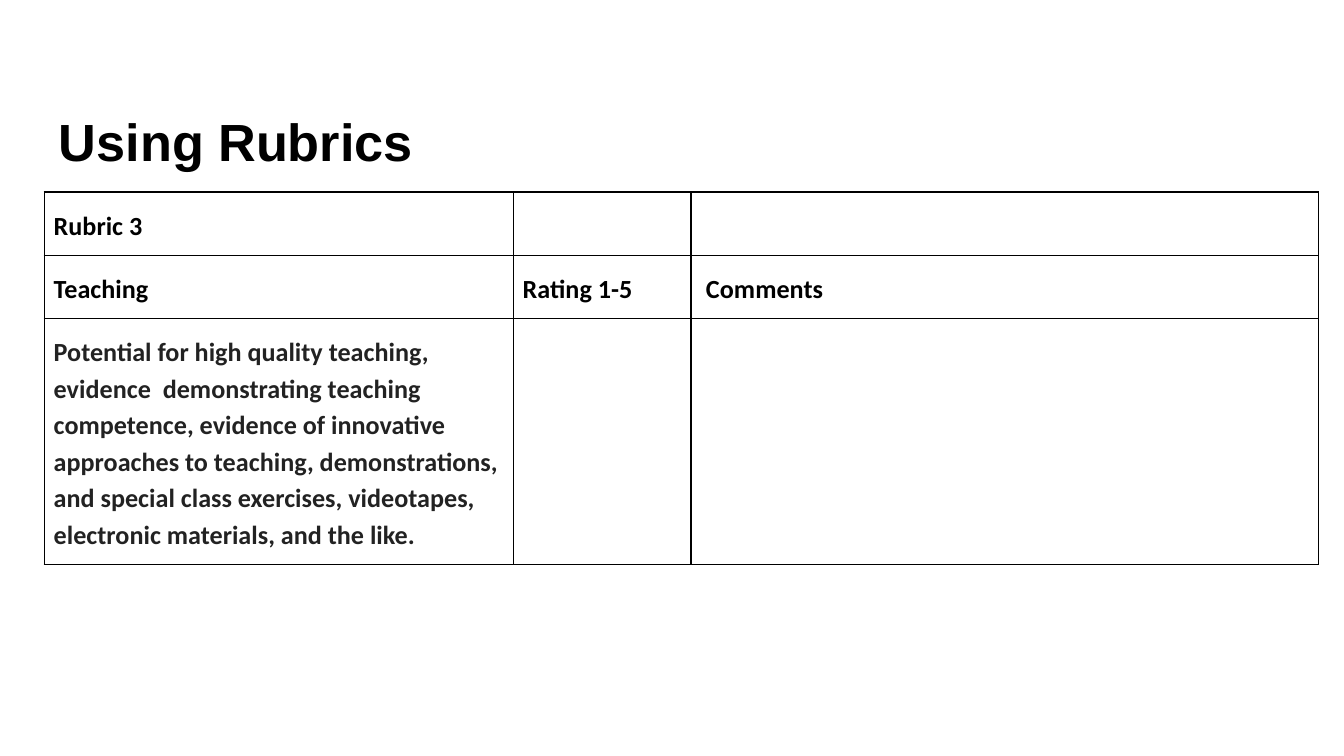
from dataclasses import dataclass

from lxml.etree import SubElement
from pptx import Presentation
from pptx.dml.color import RGBColor
from pptx.enum.text import MSO_ANCHOR
from pptx.oxml.ns import qn
from pptx.slide import Slide
from pptx.table import _Cell as Cell
from pptx.text.text import Font
from pptx.util import Inches, Pt


@dataclass(frozen=True)
class Theme:
    ink: str = "000000"
    criterion: str = "222222"
    title_font: str = "Arial"
    table_font: str = "Calibri"
    title_size: int = 28
    table_size: int = 14
    border_width: int = 1


@dataclass(frozen=True)
class RubricRow:
    height: float
    texts: tuple[str, str, str]
    color: str


THEME = Theme()
SLIDE_WIDTH = 10
SLIDE_HEIGHT = SLIDE_WIDTH * 9 / 16
COLUMN_WIDTHS = (3.49, 1.32, 4.67)
RUBRIC = (
    RubricRow(0.47, ("Rubric 3", "", ""), THEME.ink),
    RubricRow(0.47, ("Teaching", "Rating 1-5", " Comments"), THEME.ink),
    RubricRow(
        1.83,
        (
            "Potential for high quality teaching, evidence  demonstrating teaching "
            "competence, evidence of innovative approaches to teaching, "
            "demonstrations, and special class exercises, videotapes, "
            "electronic materials, and the like.",
            "",
            "",
        ),
        THEME.criterion,
    ),
)


def style_font(font: Font, name: str, size: int, color: str) -> None:
    font.name = name
    font.size = Pt(size)
    font.bold = True
    font.color.rgb = RGBColor.from_string(color)


def add_title(slide: Slide, text: str) -> None:
    title = slide.shapes.add_textbox(
        Inches(0.34), Inches(0.71), Inches(9.32), Inches(0.63)
    )
    frame = title.text_frame
    frame.word_wrap = True
    frame.margin_left = frame.margin_right = Inches(0.1)
    frame.margin_top = frame.margin_bottom = Inches(0.1)
    frame.text = text
    style_font(
        frame.paragraphs[0].runs[0].font,
        THEME.title_font, THEME.title_size, THEME.ink,
    )


def add_borders(cell: Cell) -> None:
    """Put the four edge lines ahead of the cell's fill, as the schema asks."""
    properties = cell._tc.get_or_add_tcPr()
    for position, edge in enumerate(("a:lnL", "a:lnR", "a:lnT", "a:lnB")):
        line = SubElement(properties, qn(edge), w=str(Pt(THEME.border_width)))
        fill = SubElement(line, qn("a:solidFill"))
        SubElement(fill, qn("a:srgbClr"), val=THEME.ink)
        properties.insert(position, line)


def fill_cell(cell: Cell, text: str, color: str) -> None:
    cell.fill.background()
    add_borders(cell)
    if not text:
        return
    cell.margin_left = cell.margin_right = Inches(0.07)
    cell.margin_top = cell.margin_bottom = Inches(0.1)
    cell.vertical_anchor = MSO_ANCHOR.TOP
    cell.text_frame.text = text
    paragraph = cell.text_frame.paragraphs[0]
    paragraph.line_spacing = 1.15
    style_font(paragraph.runs[0].font, THEME.table_font, THEME.table_size, color)


def add_rubric(slide: Slide, rows: tuple[RubricRow, ...]) -> None:
    table = slide.shapes.add_table(
        len(rows), len(COLUMN_WIDTHS), Inches(0.33), Inches(1.43),
        Inches(sum(COLUMN_WIDTHS)), Inches(sum(row.height for row in rows)),
    ).table
    table.first_row = False
    table.horz_banding = False
    for column, width in zip(table.columns, COLUMN_WIDTHS):
        column.width = Inches(width)
    for table_row, row in zip(table.rows, rows):
        table_row.height = Inches(row.height)
        for cell, text in zip(table_row.cells, row.texts):
            fill_cell(cell, text, row.color)


def main() -> None:
    deck = Presentation()
    deck.slide_width = Inches(SLIDE_WIDTH)
    deck.slide_height = Inches(SLIDE_HEIGHT)
    slide = deck.slides.add_slide(deck.slide_layouts[6])
    add_title(slide, "Using Rubrics")
    add_rubric(slide, RUBRIC)
    deck.save("out.pptx")


if __name__ == "__main__":
    main()
